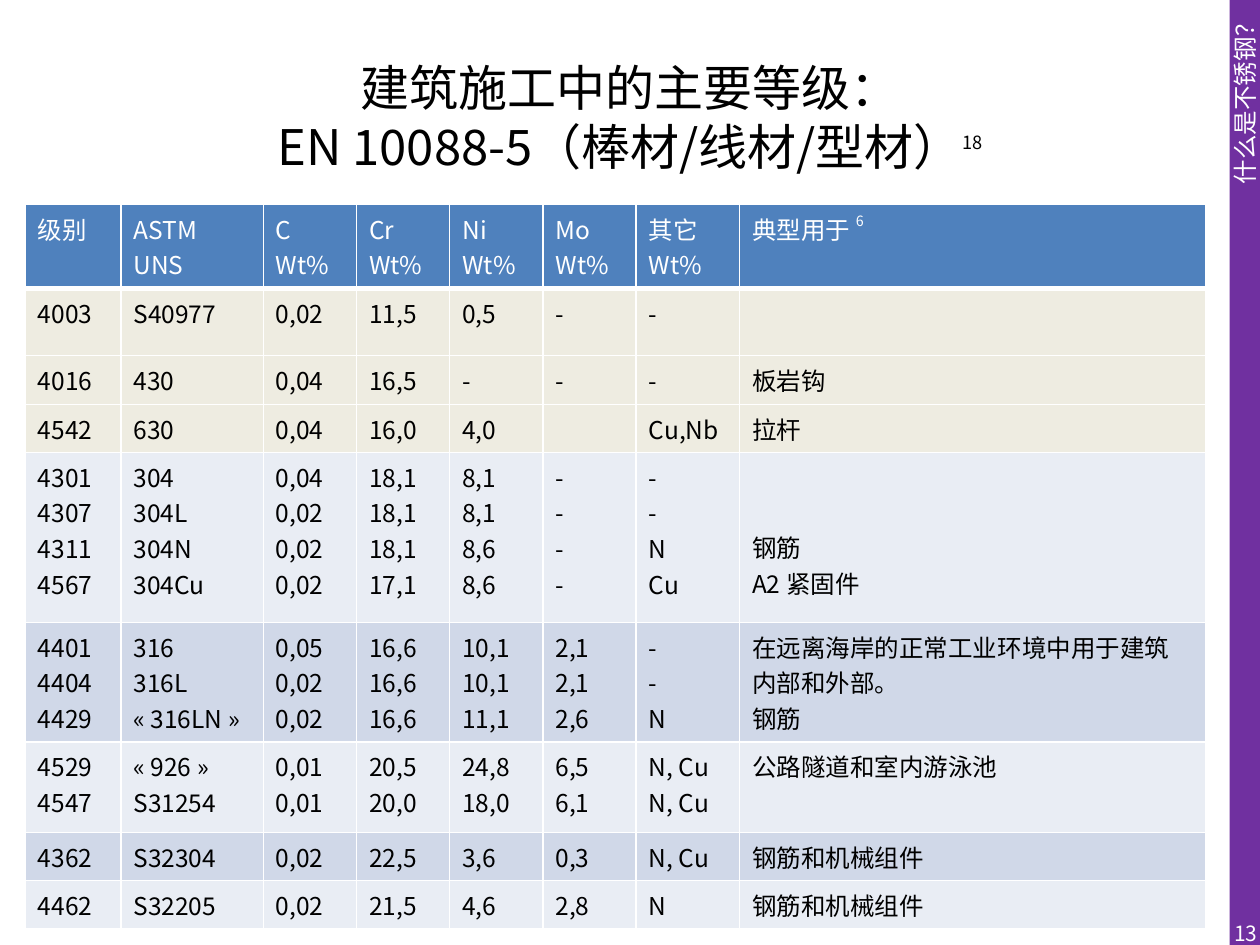
import pptx
import pptx.dml.color
import pptx.enum.shapes
import pptx.enum.text
import pptx.oxml.ns
import pptx.util
from lxml import etree
from pptx.util import Inches

RGBColor = pptx.dml.color.RGBColor
ALIGN = pptx.enum.text.PP_ALIGN
MIDDLE = pptx.enum.text.MSO_ANCHOR.MIDDLE
qn = pptx.oxml.ns.qn

FONT = "Noto Sans CJK SC"
WHITE = RGBColor(0xFF, 0xFF, 0xFF)
BLACK = RGBColor(0, 0, 0)
PURPLE = RGBColor(0x70, 0x30, 0xA0)
HEADER_BLUE = RGBColor(0x4F, 0x81, 0xBD)
FERRITIC_BEIGE = RGBColor(0xEE, 0xEC, 0xE1)
PALE_BLUE = RGBColor(0xE9, 0xED, 0xF4)
MID_BLUE = RGBColor(0xD0, 0xD8, 0xE8)

BODY_SIZE = 14
LINE_HEIGHT = 0.28
CELL_MARGIN = 0.05
COLUMN_WIDTHS = [0.76, 1.13, 0.74, 0.74, 0.74, 0.74, 0.82, 3.7]
HEADINGS = ["级别", "ASTM\nUNS", "C\nWt%", "Cr\nWt%", "Ni\nWt%", "Mo\nWt%",
            "其它\nWt%", "典型用于 "]
HEADER_HEIGHT = 0.67
GRADE_ROWS = [
    (0.53, FERRITIC_BEIGE,
     ["4003", "S40977", "0,02", "11,5", "0,5", "-", "-", ""]),
    (0.39, FERRITIC_BEIGE,
     ["4016", "430", "0,04", "16,5", "-", "-", "-", "板岩钩"]),
    (0.38, FERRITIC_BEIGE,
     ["4542", "630", "0,04", "16,0", "4,0", "", "Cu,Nb", "拉杆"]),
    (1.35, PALE_BLUE,
     ["4301\n4307\n4311\n4567", "304\n304L\n304N\n304Cu",
      "0,04\n0,02\n0,02\n0,02", "18,1\n18,1\n18,1\n17,1",
      "8,1\n8,1\n8,6\n8,6", "-\n-\n-\n-", "-\n-\nN\nCu", "钢筋\nA2 紧固件"]),
    (0.95, MID_BLUE,
     ["4401\n4404\n4429", "316\n316L\n« 316LN »", "0,05\n0,02\n0,02",
      "16,6\n16,6\n16,6", "10,1\n10,1\n11,1", "2,1\n2,1\n2,6", "-\n-\nN",
      "在远离海岸的正常工业环境中用于建筑内部和外部。\n钢筋"]),
    (0.72, PALE_BLUE,
     ["4529\n4547", "« 926 »\nS31254", "0,01\n0,01", "20,5\n20,0",
      "24,8\n18,0", "6,5\n6,1", "N, Cu\nN, Cu", "公路隧道和室内游泳池"]),
    (0.38, MID_BLUE,
     ["4362", "S32304", "0,02", "22,5", "3,6", "0,3", "N, Cu", "钢筋和机械组件"]),
    (0.38, PALE_BLUE,
     ["4462", "S32205", "0,02", "21,5", "4,6", "2,8", "N", "钢筋和机械组件"]),
]
REBAR_ROW, USE_COLUMN = 4, 7


def add_run(paragraph, text, size, color, raised=False):
    run = paragraph.add_run()
    run.text = text
    run.font.size = pptx.util.Pt(size)
    run.font.color.rgb = color
    run.font.name = FONT
    properties = run.font._element
    etree.SubElement(properties, qn("a:ea"), typeface=FONT)
    if raised:
        properties.set("baseline", "50000")


def write_text(frame, text, size=BODY_SIZE, color=BLACK, align=ALIGN.LEFT,
               reference=None, reference_size=None):
    frame.word_wrap = True
    for number, line in enumerate(text.split("\n")):
        paragraph = frame.add_paragraph() if number else frame.paragraphs[0]
        paragraph.alignment = align
        for part_number, part in enumerate(line.split("\v")):
            if part_number:
                paragraph.add_line_break()
            if part:
                add_run(paragraph, part, size, color)
    if reference:
        add_run(paragraph, reference, reference_size or size, color, raised=True)
    if not text:
        etree.SubElement(paragraph._p, qn("a:endParaRPr"), sz=str(size * 100))


def add_label(slide, left, top, width, height, text, **text_format):
    label = slide.shapes.add_textbox(
        Inches(left), Inches(top), Inches(width), Inches(height))
    label.text_frame.vertical_anchor = MIDDLE
    write_text(label.text_frame, text, **text_format)


def add_section_band(slide, text):
    band = slide.shapes.add_shape(
        pptx.enum.shapes.MSO_SHAPE.RECTANGLE,
        Inches(9.76), 0, Inches(0.24), Inches(7.5))
    band.shadow.inherit = False
    band.fill.solid()
    band.fill.fore_color.rgb = PURPLE
    band.line.fill.background()
    band.text_frame.vertical_anchor = MIDDLE
    band.text_frame._txBody.bodyPr.set("vert", "vert270")
    write_text(band.text_frame, text, color=WHITE, align=ALIGN.RIGHT)


def add_borders(cell, top=1, bottom=1):
    properties = cell._tc.get_or_add_tcPr()
    for side, width in (("L", 1), ("R", 1), ("T", top), ("B", bottom)):
        border = etree.SubElement(properties, qn(f"a:ln{side}"),
                                  w=str(pptx.util.Pt(width)))
        fill = etree.SubElement(border, qn("a:solidFill"))
        etree.SubElement(fill, qn("a:srgbClr"), val=str(WHITE))


def fill_cell(cell, text, background, top=1, bottom=1, **text_format):
    add_borders(cell, top, bottom)
    cell.fill.solid()
    cell.fill.fore_color.rgb = background
    write_text(cell.text_frame, text, **text_format)


def add_grades_table(slide):
    heights = [HEADER_HEIGHT] + [height for height, _, _ in GRADE_ROWS]
    grades = slide.shapes.add_table(
        len(heights), len(COLUMN_WIDTHS), Inches(0.2), Inches(1.62),
        Inches(sum(COLUMN_WIDTHS)), Inches(sum(heights))).table
    for column, width in zip(grades.columns, COLUMN_WIDTHS):
        column.width = Inches(width)
    for row, height in zip(grades.rows, heights):
        row.height = Inches(height)
    for column, heading in enumerate(HEADINGS):
        fill_cell(grades.cell(0, column), heading, HEADER_BLUE, bottom=3,
                  color=WHITE, reference="6" if column == USE_COLUMN else None)
    for row, (_, background, values) in enumerate(GRADE_ROWS, start=1):
        for column, value in enumerate(values):
            fill_cell(grades.cell(row, column), value, background,
                      top=3 if row == 1 else 1)
    grades.cell(REBAR_ROW, USE_COLUMN).margin_top = Inches(
        CELL_MARGIN + 2 * LINE_HEIGHT)


def main():
    presentation = pptx.Presentation()
    presentation.slide_width = Inches(10)
    presentation.slide_height = Inches(7.5)
    slide = presentation.slides.add_slide(presentation.slide_layouts[6])
    add_section_band(slide, "什么是不锈钢？")
    add_label(slide, 0.5, 0.3, 9, 1.25,
              "建筑施工中的主要等级：\vEN 10088-5（棒材/线材/型材）",
              size=28, align=ALIGN.CENTER,
              reference="18", reference_size=18)
    add_grades_table(slide)
    add_label(slide, 9.65, 7.21, 0.43, 0.4, "13",
              size=12, color=WHITE, align=ALIGN.RIGHT)
    presentation.save("out.pptx")


if __name__ == "__main__":
    main()
